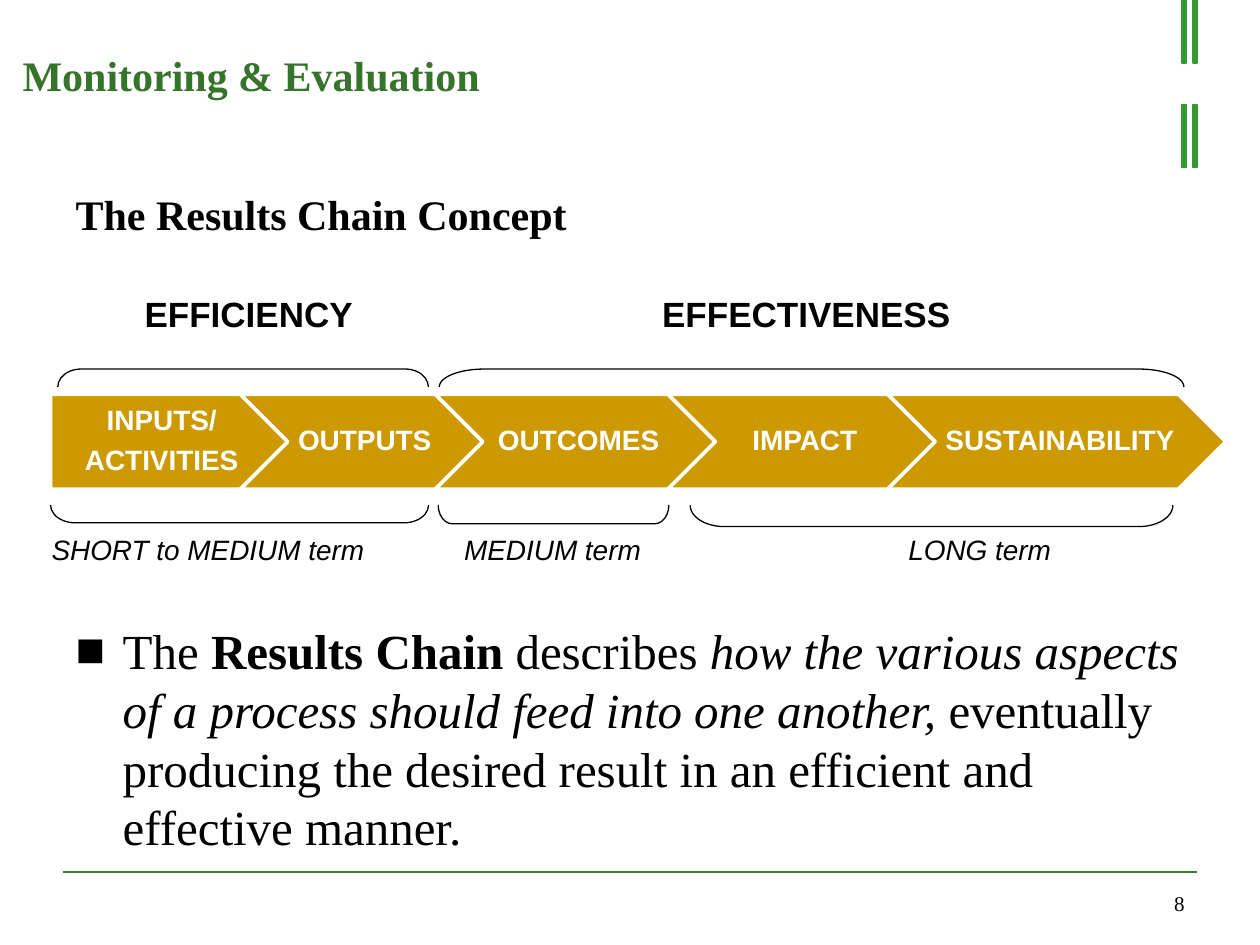
from pptx import Presentation
from pptx.dml.color import RGBColor
from pptx.enum.shapes import MSO_CONNECTOR, MSO_SHAPE
from pptx.enum.text import MSO_ANCHOR, MSO_AUTO_SIZE, PP_ALIGN
from pptx.oxml import parse_xml
from pptx.oxml.ns import nsdecls
from pptx.util import Cm, Pt

HUES = {"title": "35742A", "rule": "3B812F", "bar": "339933",
        "gold": "CC9900", "white": "FFFFFF", "black": "000000"}
SERIF, SANS = "Times New Roman", "Arial"


def hue(name):
    return RGBColor.from_string(HUES[name])


def style(item, face, size, color="black", bold=False, slant=False):
    font = item.font
    font.name, font.size = face, Pt(size)
    font.bold, font.italic = bold, slant
    font.color.rgb = hue(color)


deck = Presentation()
deck.slide_width, deck.slide_height = Cm(25.4), Cm(19.05)
slide = deck.slides.add_slide(deck.slide_layouts[1])
shapes = slide.shapes

rule = shapes.add_connector(MSO_CONNECTOR.STRAIGHT, Cm(1.27), Cm(17.58), Cm(24.13), Cm(17.58))
rule.line.color.rgb = hue("rule")
rule.line.width = Pt(1.5)
rule._element.spPr.append(parse_xml(f"<a:effectLst {nsdecls('a')}/>"))

for top in (2.11, 0):
    for left in (23.83, 24.05):
        bar = shapes.add_shape(MSO_SHAPE.RECTANGLE, Cm(left), Cm(top), Cm(0.08), Cm(1.27))
        bar.shadow.inherit = False
        bar.fill.solid()
        bar.fill.fore_color.rgb = bar.line.color.rgb = hue("bar")
        bar.line.width = Pt(0.75)

title = shapes.title
title.left, title.top, title.width, title.height = Cm(0.2), Cm(0.76), Cm(22.86), Cm(2.21)
frame = title.text_frame
frame.text = "Monitoring & Evaluation"
frame.auto_size = MSO_AUTO_SIZE.NONE
frame.vertical_anchor = MSO_ANCHOR.TOP
frame.margin_top = Cm(0.24)
frame.paragraphs[0].alignment = PP_ALIGN.LEFT
style(frame.paragraphs[0].runs[0], SERIF, 24, "title", bold=True)

body = slide.placeholders[1]
body.left, body.top, body.width, body.height = Cm(1.27), Cm(3.58), Cm(22.86), Cm(14.4)
frame = body.text_frame
frame.auto_size = MSO_AUTO_SIZE.NONE
frame.margin_top = Cm(0.22)
frame.text = "The Results Chain Concept"
head, point = frame.paragraphs[0], frame.add_paragraph()
for para in (head, point):
    props = para._p.get_or_add_pPr()
    props.set("marL", str(Cm(0.95)))
    props.set("indent", str(-Cm(0.95)))
    para.space_before = Pt(0)
head._p.pPr.append(parse_xml(f"<a:buNone {nsdecls('a')}/>"))
style(head.runs[0], SERIF, 24, bold=True)
point.space_before = Pt(218)
for mark in ('<a:buClr {}><a:srgbClr val="000000"/></a:buClr>',
             '<a:buFont {} typeface="Arial"/>', '<a:buChar {} char="■"/>'):
    point._p.pPr.append(parse_xml(mark.format(nsdecls("a"))))
for text, bold, slant in (
        ("The ", False, False),
        ("Results Chain ", True, False),
        ("describes ", False, False),
        ("how the various aspects of a process should feed into one another, ", False, True),
        ("eventually producing the desired result in an efficient and effective manner.",
         False, False)):
    run = point.add_run()
    run.text = text
    style(run, SERIF, 28, bold=bold, slant=slant)

left = 1.02
for text, width in (("INPUTS/\nACTIVITIES", 4.78), ("OUTPUTS", 4.88), ("OUTCOMES", 5.64),
                    ("IMPACT", 5.38), ("SUSTAINABILITY", 6.81)):
    first = left == 1.02
    kind = MSO_SHAPE.PENTAGON if first else MSO_SHAPE.CHEVRON
    step = shapes.add_shape(kind, Cm(left), Cm(7.95), Cm(width), Cm(1.91))
    step.shadow.inherit = False
    step.fill.solid()
    step.fill.fore_color.rgb = hue("gold")
    step.line.color.rgb = hue("white")
    step.line.width = Pt(2)
    frame = step.text_frame
    frame.text = text
    frame.vertical_anchor = MSO_ANCHOR.MIDDLE
    frame.margin_left, frame.margin_right = Cm(0.23 if first else 0.18), Cm(0.05)
    for para in frame.paragraphs:
        para.alignment = PP_ALIGN.CENTER
        para.line_spacing = 0.9
        para.space_after = Pt(5.6)
        style(para.runs[0], SANS, 16, "white", bold=True)
    left += width - 0.95

for mid, level, span, depth, turn, bend in (
        (4.9, 7.62, 7.47, 0.36, 90, 1.3), (16.36, 7.62, 15.01, 0.36, 90, 2.51),
        (4.83, 10.36, 7.62, 0.36, 270, 1.39), (11.16, 10.37, 4.65, 0.38, 270, 0.76),
        (18.78, 10.4, 9.73, 0.43, 270, 1.59)):
    brace = shapes.add_shape(MSO_SHAPE.LEFT_BRACKET, Cm(mid - depth / 2),
                             Cm(level - span / 2), Cm(depth), Cm(span))
    brace.rotation = turn
    brace.adjustments[0] = bend
    brace.shadow.inherit = False
    brace.fill.background()
    brace.line.color.rgb = hue("black")
    brace.line.width = Pt(0.75)

MID, LEFT, RIGHT = PP_ALIGN.CENTER, PP_ALIGN.LEFT, PP_ALIGN.RIGHT
for text, left, top, width, high, side, face, size, bold, slant in (
        ("EFFICIENCY", 1.42, 5.77, 7.19, 1.9, MID, SANS, 20, True, False),
        ("EFFECTIVENESS", 12.85, 5.77, 6.81, 1.9, MID, SANS, 20, True, False),
        ("SHORT to MEDIUM term", 0.79, 10.62, 8, 2.13, LEFT, SANS, 16, False, True),
        ("MEDIUM term", 8.84, 10.62, 4.6, 0.76, MID, SANS, 16, False, True),
        ("LONG term", 17.45, 10.62, 4.6, 0.76, MID, SANS, 16, False, True),
        ("8", 18.21, 17.75, 5.92, 0.84, RIGHT, SERIF, 12, False, False)):
    label = shapes.add_textbox(Cm(left), Cm(top), Cm(width), Cm(high))
    frame = label.text_frame
    frame.word_wrap = True
    frame.text = text
    if side == RIGHT:
        frame.vertical_anchor = MSO_ANCHOR.BOTTOM
    frame.paragraphs[0].alignment = side
    style(frame.paragraphs[0].runs[0], face, size, bold=bold, slant=slant)

deck.save("out.pptx")
